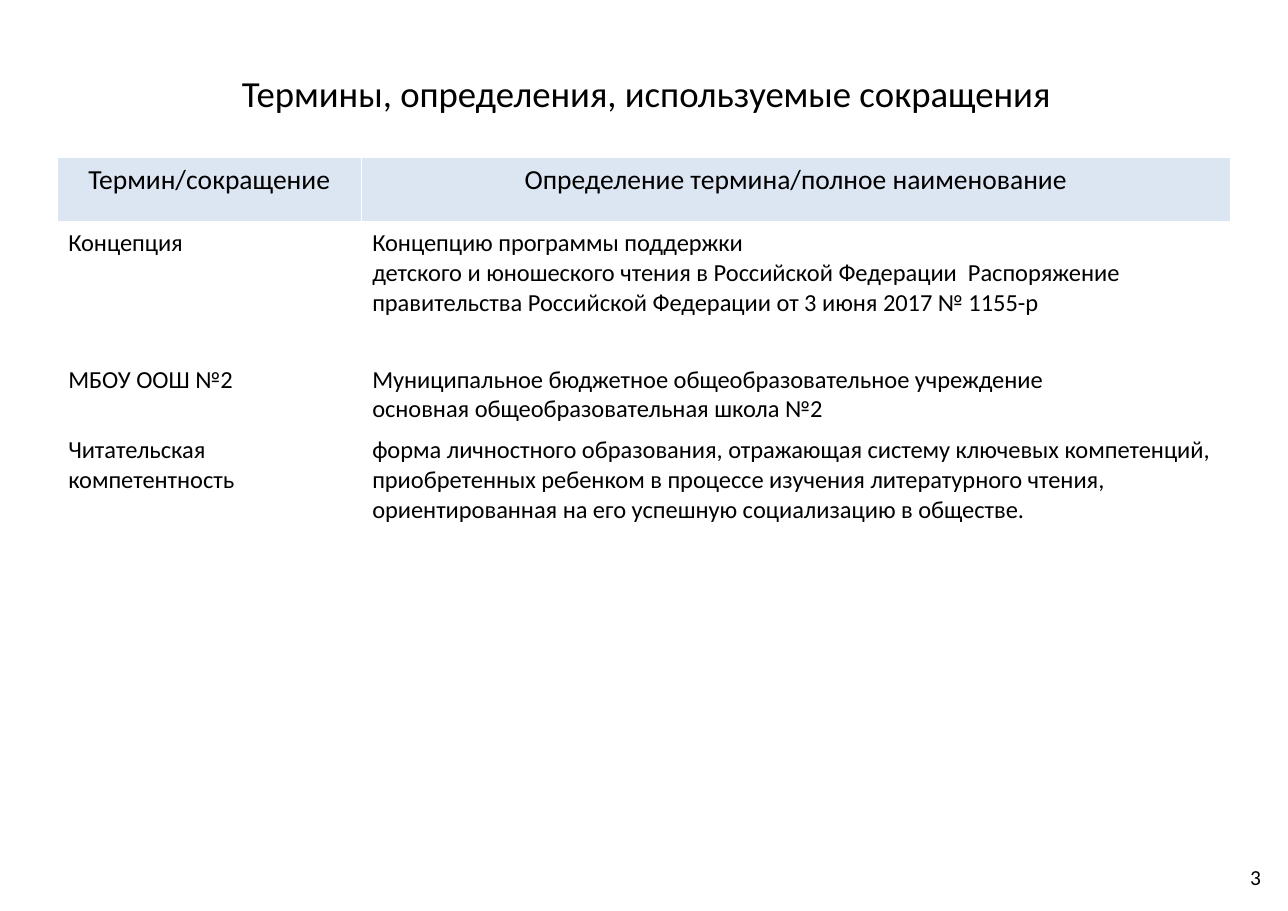
from lxml import etree
from pptx import Presentation
from pptx.dml.color import RGBColor
from pptx.enum import text
from pptx.oxml import ns
from pptx.util import Cm, Pt

TITLE = "Термины, определения, используемые сокращения"
PAGE = "3"
HEAD = ("Термин/сокращение", "Определение термина/полное наименование")
TERMS = [
    ("Концепция",
     "Концепцию программы поддержки\n"
     "детского и юношеского чтения в Российской Федерации  Распоряжение "
     "правительства Российской Федерации от 3 июня 2017 № 1155-р"),
    ("МБОУ ООШ №2",
     "Муниципальное бюджетное общеобразовательное учреждение\v"
     "основная общеобразовательная школа №2"),
    ("Читательская компетентность",
     "форма личностного образования, отражающая систему ключевых компетенций, "
     "приобретенных ребенком в процессе изучения литературного чтения, "
     "ориентированная на его успешную социализацию в обществе."),
]
SPARE = 3  # empty rows below the terms
COLS = (7.01, 20.04)
ROWS = [1.5, 3.15] + [1.04] * (len(TERMS) - 1 + SPARE)
HUES = {"ink": "000000", "head": "DCE6F2", "paper": "FFFFFF"}
FONT = "Calibri"
ALIGN = text.PP_ALIGN


def hue(name):
    return RGBColor.from_string(HUES[name])


def write(frame, words, size, align):
    frame.text = words
    for para in frame.paragraphs:
        para.alignment = align
        for run in para.runs:
            font = run.font
            font.name, font.size, font.bold = FONT, Pt(size), False
            font.color.rgb = hue("ink")


def edge(cell, base):
    """Give the cell white borders, with the bottom one base points wide."""
    props = cell._tc.get_or_add_tcPr()
    for side, width in zip("LRTB", (1, 1, 1, base)):
        line = etree.SubElement(props, ns.qn(f"a:ln{side}"), w=str(Pt(width)))
        fill = etree.SubElement(line, ns.qn("a:solidFill"))
        etree.SubElement(fill, ns.qn("a:srgbClr"), val=HUES["paper"])


def place(shape, left, top, width, height):
    shape.left, shape.top = Cm(left), Cm(top)
    shape.width, shape.height = Cm(width), Cm(height)


def add_terms(slide):
    grid = slide.shapes.add_table(len(ROWS), len(COLS), Cm(1.32), Cm(3.63),
                                  Cm(sum(COLS)), Cm(sum(ROWS))).table
    for col, width in zip(grid.columns, COLS):
        col.width = Cm(width)
    for row, height in zip(grid.rows, ROWS):
        row.height = Cm(height)
    lines = [HEAD, *TERMS] + [("", "")] * SPARE
    for r, (row, line) in enumerate(zip(grid.rows, lines)):
        top = r == 0
        for cell, words in zip(row.cells, line):
            edge(cell, 3 if top else 1)
            cell.fill.solid()
            cell.fill.fore_color.rgb = hue("head" if top else "paper")
            if words:
                write(cell.text_frame, words, 18 if top else 16,
                      ALIGN.CENTER if top else ALIGN.LEFT)


def main():
    deck = Presentation()
    deck.slide_width, deck.slide_height = Cm(29.7), Cm(21)
    slide = deck.slides.add_slide(deck.slide_layouts[5])

    title = slide.shapes.title
    place(title, 0.53, 0.81, 28.75, 2.64)
    title.text_frame.vertical_anchor = text.MSO_ANCHOR.MIDDLE
    write(title.text_frame, TITLE, 24, ALIGN.CENTER)

    add_terms(slide)

    page = slide.shapes.add_textbox(Cm(22.4), Cm(19.66), Cm(6.93), Cm(1.12))
    page.text_frame.word_wrap = True
    page.text_frame.vertical_anchor = text.MSO_ANCHOR.MIDDLE
    write(page.text_frame, PAGE, 14, ALIGN.RIGHT)

    deck.save("out.pptx")


if __name__ == "__main__":
    main()
